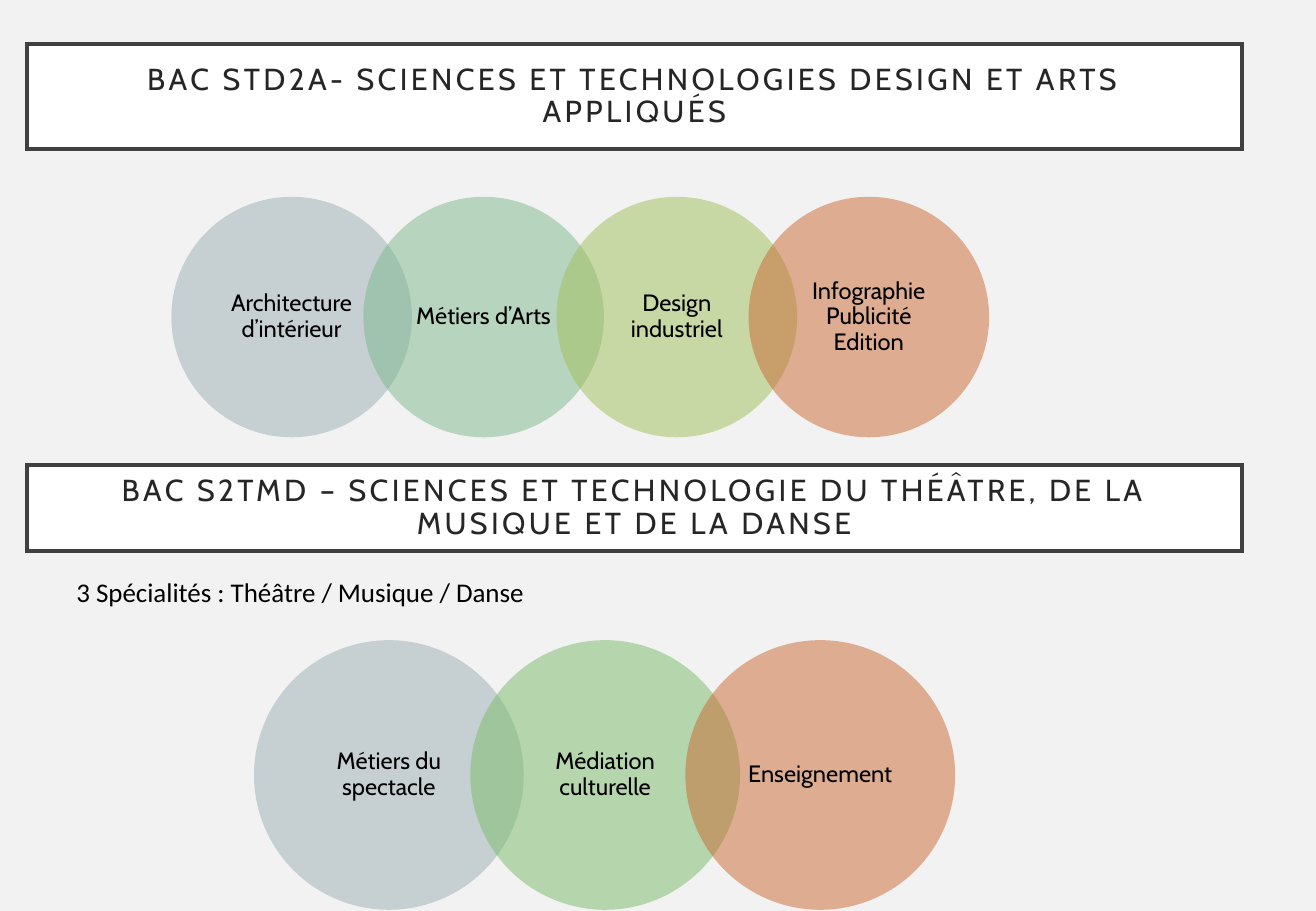
from dataclasses import dataclass

from lxml import etree
from pptx import Presentation
from pptx import util as u
from pptx.dml.color import RGBColor
from pptx.enum import shapes, text
from pptx.oxml import ns

PX = 9144  # EMU per px, 100 px to the inch


@dataclass(frozen=True)
class Theme:
    background: str = "F2F2F2"
    banner: str = "FFFFFF"
    border: str = "404040"
    heading: str = "262626"
    body: str = "000000"
    grey: str = "9BAFB5"
    mint: str = "7BB88C"
    olive: str = "9FC057"
    green: str = "7ABC69"
    orange: str = "C96731"
    font: str = "Cabin"
    note_font: str = "Calibri"
    heading_size: int = 18
    note_size: int = 16
    label_size: int = 14


THEME = Theme()


def emu(*lengths):
    return [u.Emu(length * PX) for length in lengths]


def paint(fill, color, opacity=100):
    fill.solid()
    fill.fore_color.rgb = RGBColor.from_string(color)
    if opacity < 100:
        color_element = fill._xPr.find(".//" + ns.qn("a:srgbClr"))
        etree.SubElement(color_element, ns.qn("a:alpha"), val=str(opacity * 1000))


def write(shape, words, size, color=THEME.body, font=THEME.font,
          align=text.PP_ALIGN.CENTER, anchor=text.MSO_ANCHOR.MIDDLE,
          insets=(10, 5), line_spacing=0.9, tracking=0):
    """Fill a shape with one paragraph; insets are horizontal, vertical px."""
    frame = shape.text_frame
    frame.word_wrap = True
    frame.auto_size = text.MSO_AUTO_SIZE.NONE
    frame.vertical_anchor = anchor
    frame.margin_left, frame.margin_top = emu(*insets)
    frame.margin_right, frame.margin_bottom = emu(*insets)
    paragraph = frame.paragraphs[0]
    paragraph.alignment = align
    paragraph.line_spacing = line_spacing
    run = paragraph.add_run()
    run.text = words
    run.font.name = font
    run.font.size = u.Pt(size)
    run.font.color.rgb = RGBColor.from_string(color)
    if tracking:
        run._r.get_or_add_rPr().set("spc", str(tracking * 100))


def format_banner(shape, words, box):
    shape.left, shape.top, shape.width, shape.height = emu(*box)
    paint(shape.fill, THEME.banner)
    paint(shape.line.fill, THEME.border)
    shape.line.width = u.Pt(2.5)
    outline = shape._element.spPr.find(ns.qn("a:ln"))
    etree.SubElement(outline, ns.qn("a:miter"), lim="800000")
    write(shape, words, THEME.heading_size, color=THEME.heading,
          insets=(20, 20), tracking=2)


def add_circle_chain(slide, circles, left, top, diameter, inset):
    """Row of translucent circles, each overlapping the last by a fifth."""
    group = slide.shapes.add_group_shape()
    for index, (label, color) in enumerate(circles):
        x = left + round(index * diameter * 0.8)
        circle = group.shapes.add_shape(
            shapes.MSO_SHAPE.OVAL, *emu(x, top, diameter, diameter))
        circle.shadow.inherit = False
        circle.line.fill.background()
        paint(circle.fill, color, opacity=50)
        write(circle, label, THEME.label_size, insets=(inset, 2))


def add_note(slide, words, box):
    write(slide.shapes.add_textbox(*emu(*box)), words, THEME.note_size,
          font=THEME.note_font, align=text.PP_ALIGN.LEFT,
          anchor=text.MSO_ANCHOR.TOP, line_spacing=1.0)


def build_bac_slide(presentation):
    slide = presentation.slides.add_slide(presentation.slide_layouts[5])
    paint(slide.background.fill, THEME.background)

    format_banner(
        slide.shapes.title,
        "BAC STD2A- SCIENCES ET TECHNOLOGIES DESIGN ET ARTS APPLIQUÉS",
        (22, 36, 1000, 87))
    add_circle_chain(slide, [
        ("Architecture d’intérieur", THEME.grey),
        ("Métiers d’Arts", THEME.mint),
        ("Design industriel", THEME.olive),
        ("Infographie Publicité Edition", THEME.orange),
    ], left=141, top=162, diameter=198, inset=11)

    box = (22, 383, 1000, 71)
    banner = slide.shapes.add_shape(shapes.MSO_SHAPE.RECTANGLE, *emu(*box))
    banner.shadow.inherit = False
    format_banner(
        banner,
        "BAC S2TMD – SCIENCES ET TECHNOLOGIE DU THÉÂTRE, "
        "DE LA MUSIQUE ET DE LA DANSE",
        box)
    add_note(slide, "3 Spécialités : Théâtre / Musique / Danse",
             (53, 469, 996, 37))
    add_circle_chain(slide, [
        ("Métiers du spectacle", THEME.grey),
        ("Médiation culturelle", THEME.green),
        ("Enseignement", THEME.orange),
    ], left=209, top=527, diameter=222, inset=12)


def main():
    presentation = Presentation()
    presentation.slide_width, presentation.slide_height = emu(1083, 750)
    build_bac_slide(presentation)
    presentation.save("out.pptx")


if __name__ == "__main__":
    main()
